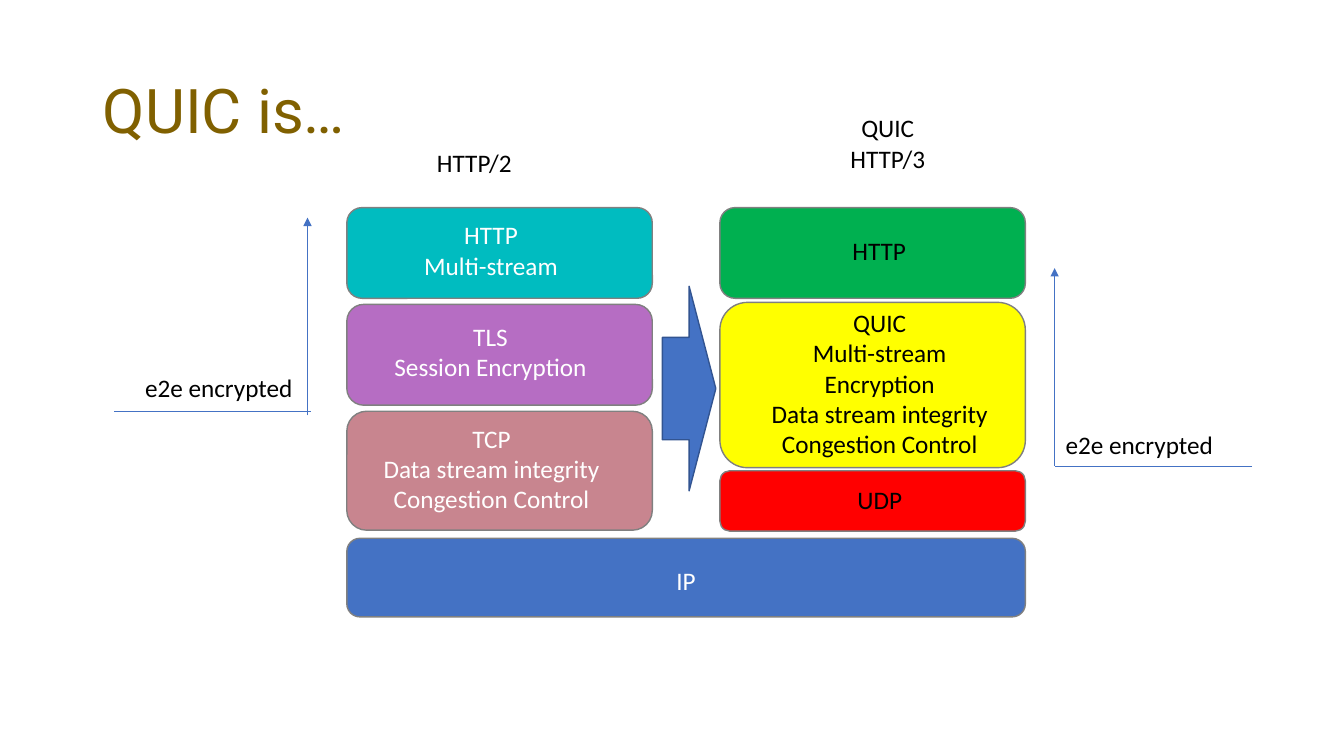
from lxml import etree
from pptx import Presentation
from pptx.dml.color import RGBColor
from pptx.enum import shapes, text
from pptx.oxml.ns import qn
from pptx.util import Inches, Pt

BLACK, WHITE, BLUE = "000000", "FFFFFF", "4472C4"
LEFT_STACK, RIGHT_STACK, STACK_WIDTH = 3.44, 7.14, 3.03


def rgb(value):
    return RGBColor.from_string(value)


def add_block(kind, left, top, width, height, fill, outline):
    shape = slide.shapes.add_shape(
        kind, Inches(left), Inches(top), Inches(width), Inches(height))
    shape.shadow.inherit = False
    shape.fill.solid()
    shape.fill.fore_color.rgb = rgb(fill)
    shape.line.color.rgb = rgb(outline)
    shape.line.width = Pt(1)


presentation = Presentation()
presentation.slide_width = Inches(13.33)
presentation.slide_height = Inches(7.5)
slide = presentation.slides.add_slide(presentation.slide_layouts[5])

# Title
title = slide.shapes.title
title.left, title.top = Inches(0.92), Inches(0.4)
title.width, title.height = Inches(11.5), Inches(1.45)
title.text_frame.text = "QUIC is…"
title.text_frame.vertical_anchor = text.MSO_ANCHOR.MIDDLE
paragraph = title.text_frame.paragraphs[0]
paragraph.alignment = text.PP_ALIGN.LEFT
paragraph.line_spacing = 0.9
paragraph.font.name = "Roboto"
paragraph.font.size = Pt(44)
paragraph.font.color.rgb = rgb("806000")

# Protocol layers: left, top, width, height, fill
layers = [
    (LEFT_STACK, 5.34, RIGHT_STACK + STACK_WIDTH - LEFT_STACK, 0.78, BLUE),
    (LEFT_STACK, 4.08, STACK_WIDTH, 1.18, "C8858F"),
    (LEFT_STACK, 3.02, STACK_WIDTH, 1, "B66DC3"),
    (LEFT_STACK, 2.06, STACK_WIDTH, 0.9, "00BCC0"),
    (RIGHT_STACK, 2.06, STACK_WIDTH, 0.9, "00B050"),
    (RIGHT_STACK, 4.67, STACK_WIDTH, 0.6, "FF0000"),
    (RIGHT_STACK, 3, STACK_WIDTH, 1.64, "FFFF00"),
]
for left, top, width, height, fill in layers:
    add_block(shapes.MSO_SHAPE.ROUNDED_RECTANGLE,
              left, top, width, height, fill, "808080")
add_block(shapes.MSO_SHAPE.RIGHT_ARROW, 6.57, 2.84, 0.53, 2.03, BLUE, "325491")

# Labels: left, top, width, colour, lines
labels = [
    (4.1, 2.13, 1.54, WHITE, ["HTTP", "Multi-stream"]),
    (3.8, 3.14, 2.13, WHITE, ["TLS", "Session Encryption"]),
    (3.69, 4.15, 2.37, WHITE,
     ["TCP", "Data stream integrity", "Congestion Control"]),
    (8.35, 2.29, 0.74, BLACK, ["HTTP"]),
    (7.54, 3, 2.37, BLACK,
     ["QUIC", "Multi-stream", "Encryption", "Data stream integrity",
      "Congestion Control"]),
    (8.4, 4.76, 0.65, BLACK, ["UDP"]),
    (6.61, 5.56, 0.39, WHITE, ["IP"]),
    (4.23, 1.41, 0.95, BLACK, ["HTTP/2"]),
    (8.33, 1.07, 0.95, BLACK, ["QUIC", "HTTP/3"]),
    (1.33, 3.64, 1.68, BLACK, ["e2e encrypted"]),
    (10.46, 4.21, 1.68, BLACK, ["e2e encrypted"]),
]
for left, top, width, colour, lines in labels:
    height = 0.1 + 0.3 * len(lines)
    label = slide.shapes.add_textbox(
        Inches(left), Inches(top), Inches(width), Inches(height))
    frame = label.text_frame
    frame.text = "\n".join(lines)
    frame.word_wrap = False
    frame.auto_size = text.MSO_AUTO_SIZE.SHAPE_TO_FIT_TEXT
    for paragraph in frame.paragraphs:
        paragraph.alignment = text.PP_ALIGN.CENTER
        paragraph.font.name = "Calibri"
        paragraph.font.size = Pt(18)
        paragraph.font.color.rgb = rgb(colour)

# Encryption range markers: start x, start y, end x, end y, arrowhead
markers = [
    (3.08, 4.08, 1.13, 4.08, False),
    (12.42, 4.63, 10.46, 4.63, False),
    (3.05, 4.12, 3.05, 2.16, True),
    (10.46, 4.62, 10.46, 2.66, True),
]
for start_x, start_y, end_x, end_y, has_arrowhead in markers:
    marker = slide.shapes.add_connector(
        shapes.MSO_CONNECTOR.STRAIGHT,
        Inches(start_x), Inches(start_y), Inches(end_x), Inches(end_y))
    marker.line.color.rgb = rgb(BLUE)
    marker.line.width = Pt(0.5)
    properties = marker._element.spPr
    if has_arrowhead:
        etree.SubElement(properties.find(qn("a:ln")), qn("a:tailEnd"),
                         type="triangle")
    etree.SubElement(properties, qn("a:effectLst"))

presentation.save("out.pptx")
